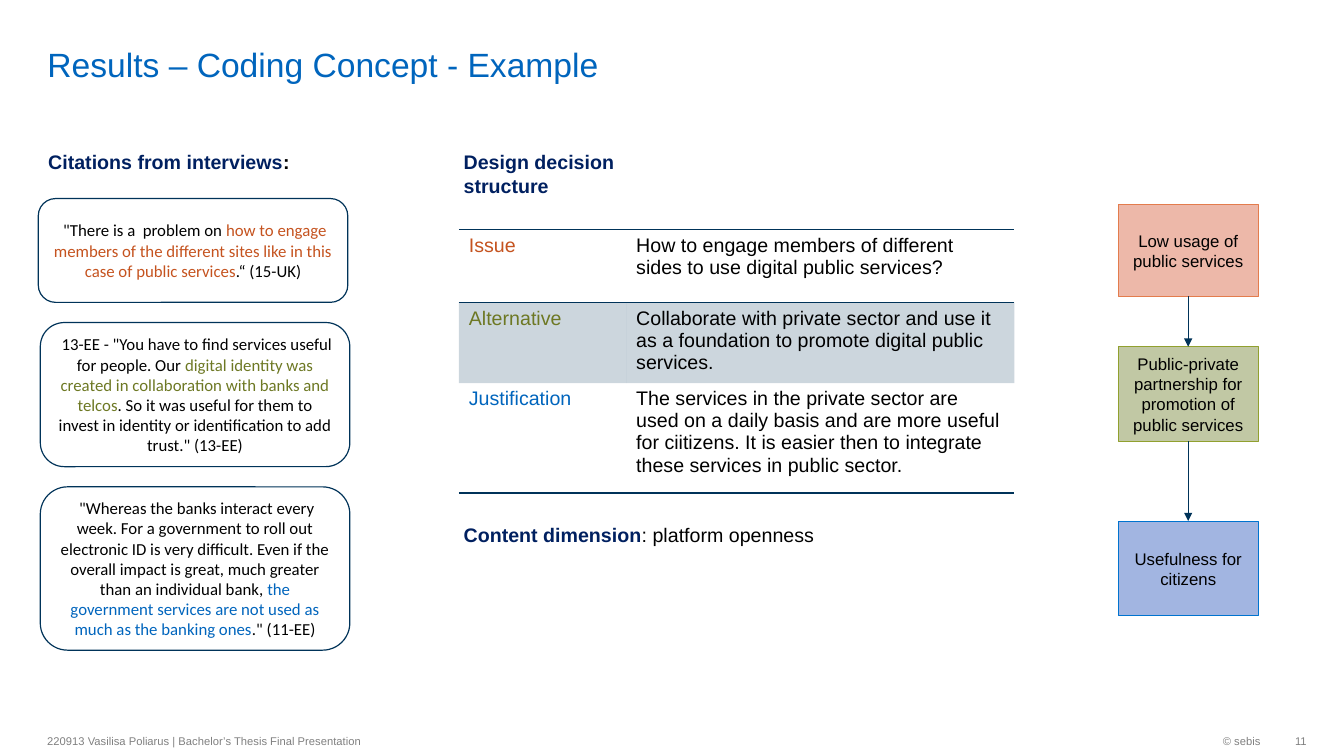
from dataclasses import dataclass

from lxml import etree
from pptx import Presentation
from pptx.dml.color import RGBColor
from pptx.enum.shapes import MSO_CONNECTOR, MSO_SHAPE
from pptx.enum.text import MSO_ANCHOR, PP_ALIGN
from pptx.oxml.ns import qn
from pptx.util import Inches, Pt

ROUNDED, RECTANGLE = MSO_SHAPE.ROUNDED_RECTANGLE, MSO_SHAPE.RECTANGLE
STRAIGHT = MSO_CONNECTOR.STRAIGHT
TOP, MIDDLE, BOTTOM = MSO_ANCHOR.TOP, MSO_ANCHOR.MIDDLE, MSO_ANCHOR.BOTTOM
LEFT, CENTER, RIGHT = PP_ALIGN.LEFT, PP_ALIGN.CENTER, PP_ALIGN.RIGHT

BLACK = RGBColor(0x00, 0x00, 0x00)
WHITE = RGBColor(0xFF, 0xFF, 0xFF)
GRAY = RGBColor(0x80, 0x80, 0x80)
BLUE = RGBColor(0x00, 0x65, 0xBD)
NAVY = RGBColor(0x00, 0x33, 0x59)
HEADING = RGBColor(0x00, 0x20, 0x60)
ORANGE = RGBColor(0xC5, 0x53, 0x1F)
GREEN = RGBColor(0x6D, 0x78, 0x23)

NO_STYLE = "{2D5ABB26-0587-4C30-8999-92F81FD0307C}"


@dataclass
class Phrase:
    """A stretch of text in one colour and weight."""
    text: str
    color: RGBColor = BLACK
    bold: bool = False


@dataclass
class Box:
    left: float
    top: float
    width: float
    height: float
    phrases: list[Phrase]
    fill: RGBColor = WHITE
    line: RGBColor = NAVY


@dataclass
class Label:
    left: float
    top: float
    width: float
    height: float
    phrases: list[Phrase]
    size: float = 14
    align: PP_ALIGN = LEFT
    anchor: MSO_ANCHOR = TOP
    right_inset: float = 0.1


@dataclass
class Row:
    name: str
    color: RGBColor
    text: str
    height: float
    shaded: bool = False
    borders: tuple[str, ...] = ()


CITATIONS = [
    Box(0.38, 1.97, 3.07, 1.03, [
        Phrase(' "There is a  problem on '),
        Phrase("how to engage members of the different sites like in this case of public services", ORANGE),
        Phrase(".“ (15-UK)")]),
    Box(0.4, 3.2, 3.07, 1.43, [
        Phrase(' 13-EE - "You have to find services useful for people. Our '),
        Phrase("digital identity was created in collaboration with banks and telcos", GREEN),
        Phrase('. So it was useful for them to invest in identity or identification to add trust." (13-EE)')]),
    Box(0.4, 4.83, 3.07, 1.62, [
        Phrase(' "Whereas the banks interact every week. For a government to roll out electronic ID is very '
               "difficult. Even if the overall impact is great, much greater than an individual bank, "),
        Phrase("the government services are not used as much as the banking ones", BLUE),
        Phrase('." (11-EE)')]),
]
CONCEPTS = [
    Box(11.09, 2.03, 1.39, 0.91, [Phrase("Low usage of public services")],
        RGBColor(0xED, 0xB8, 0xA9), RGBColor(0xE3, 0x7C, 0x4D)),
    Box(11.09, 3.44, 1.39, 0.94, [Phrase("Public-private partnership for promotion of public services")],
        RGBColor(0xC1, 0xC8, 0xA4), RGBColor(0x91, 0xA0, 0x2F)),
    Box(11.09, 5.17, 1.39, 0.94, [Phrase("Usefulness for citizens")],
        RGBColor(0xA2, 0xB5, 0xE1), RGBColor(0x00, 0x73, 0xCF)),
]
LABELS = [
    Label(0.38, 1.44, 2.73, 0.34, [Phrase("Citations from interviews", HEADING, True), Phrase(":", bold=True)]),
    Label(4.5, 1.44, 1.97, 0.57, [Phrase("Design decision structure", HEADING, True)]),
    Label(4.5, 5.14, 3.69, 0.34, [Phrase("Content dimension", HEADING, True), Phrase(": platform openness")]),
    Label(0.37, 7.19, 4.73, 0.32,
          [Phrase("220913 Vasilisa Poliarus | Bachelor’s Thesis Final Presentation", GRAY)], 8, LEFT, MIDDLE),
    Label(10.26, 7.19, 2.34, 0.32, [Phrase("© sebis", GRAY)], 8, RIGHT, MIDDLE),
    Label(12.6, 7.19, 0.36, 0.32, [Phrase("11", GRAY)], 8, RIGHT, MIDDLE, 0),
]
COLUMN_WIDTHS = [1.66, 3.85]
ROWS = [
    Row("Issue", ORANGE, "How to engage members of different sides to use digital public services?",
        0.72, borders=("a:lnT", "a:lnB")),
    Row("Alternative", GREEN, "Collaborate with private sector and use it as a foundation to promote "
        "digital public services.", 0.76, shaded=True),
    Row("Justification", BLUE, "The services in the private sector are used on a daily basis and are more "
        "useful for ciitizens. It is easier then to integrate these services in public sector.",
        1.09, borders=("a:lnB",)),
]


def write(text_frame, phrases: list[Phrase], size: float, font: str = "Arial", align: PP_ALIGN = LEFT) -> None:
    paragraph = text_frame.paragraphs[0]
    paragraph.alignment = align
    for phrase in phrases:
        run = paragraph.add_run()
        run.text = phrase.text
        run.font.name, run.font.size, run.font.bold = font, Pt(size), phrase.bold
        run.font.color.rgb = phrase.color


def add_label(slide, label: Label) -> None:
    shape = slide.shapes.add_textbox(*map(Inches, (label.left, label.top, label.width, label.height)))
    frame = shape.text_frame
    frame.word_wrap = True
    frame.vertical_anchor = label.anchor
    frame.margin_right = Inches(label.right_inset)
    write(frame, label.phrases, label.size, align=label.align)


def add_box(slide, box: Box, kind: MSO_SHAPE, line_width: float, font: str):
    shape = slide.shapes.add_shape(kind, *map(Inches, (box.left, box.top, box.width, box.height)))
    shape.shadow.inherit = False
    shape.fill.solid()
    shape.fill.fore_color.rgb = box.fill
    shape.line.color.rgb = box.line
    shape.line.width = Pt(line_width)
    shape.text_frame.word_wrap = True
    shape.text_frame.vertical_anchor = MIDDLE
    write(shape.text_frame, box.phrases, 12, font, CENTER)
    return shape


def add_arrow(slide, upper, lower) -> None:
    connector = slide.shapes.add_connector(STRAIGHT, 0, 0, 0, 0)
    connector.begin_connect(upper, 2)
    connector.end_connect(lower, 0)
    connector.line.color.rgb = NAVY
    connector.line.width = Pt(0.75)
    properties = connector._element.spPr
    etree.SubElement(properties.find(qn("a:ln")), qn("a:tailEnd"), type="triangle")
    etree.SubElement(properties, qn("a:effectLst"))


def format_cell(cell, row: Row) -> None:
    properties = cell._tc.get_or_add_tcPr()
    for tag in row.borders:
        border = etree.SubElement(properties, qn(tag), w=str(Pt(1)))
        fill = etree.SubElement(border, qn("a:solidFill"))
        etree.SubElement(fill, qn("a:srgbClr"), val=str(NAVY))
    if row.shaded:
        cell.fill.solid()
        cell.fill.fore_color.rgb = NAVY
        color = properties.find(".//" + qn("a:srgbClr"))
        etree.SubElement(color, qn("a:alpha"), val="20000")
    else:
        cell.fill.background()


def add_decision_table(slide) -> None:
    height = sum(row.height for row in ROWS)
    frame = slide.shapes.add_table(len(ROWS), len(COLUMN_WIDTHS), Inches(4.55), Inches(2.28),
                                   Inches(sum(COLUMN_WIDTHS)), Inches(height))
    table = frame.table
    table.first_row = table.horz_banding = False
    table._tbl.tblPr.find(qn("a:tableStyleId")).text = NO_STYLE
    for column, width in zip(table.columns, COLUMN_WIDTHS):
        column.width = Inches(width)
    for index, row in enumerate(ROWS):
        table.rows[index].height = Inches(row.height)
        for column, phrase in enumerate((Phrase(row.name, row.color), Phrase(row.text))):
            cell = table.cell(index, column)
            write(cell.text_frame, [phrase], 14)
            format_cell(cell, row)


def main() -> None:
    presentation = Presentation()
    presentation.slide_width, presentation.slide_height = Inches(13.33), Inches(7.5)
    slide = presentation.slides.add_slide(presentation.slide_layouts[5])

    # Title
    title = slide.shapes.title
    title.left, title.top, title.width, title.height = map(Inches, (0.37, 0.05, 10.99, 0.79))
    title.text_frame.vertical_anchor = BOTTOM
    title.text_frame.margin_top = title.text_frame.margin_bottom = 0
    write(title.text_frame, [Phrase("Results – Coding Concept - Example", BLUE)], 24)

    # Headings and footer
    for label in LABELS:
        add_label(slide, label)

    # Citations, decision table and concept chain
    for citation in CITATIONS:
        add_box(slide, citation, ROUNDED, 0.85, "Calibri")
    add_decision_table(slide)
    concepts = [add_box(slide, concept, RECTANGLE, 0.75, "Arial") for concept in CONCEPTS]
    for upper, lower in zip(concepts, concepts[1:]):
        add_arrow(slide, upper, lower)

    presentation.save("out.pptx")


if __name__ == "__main__":
    main()
